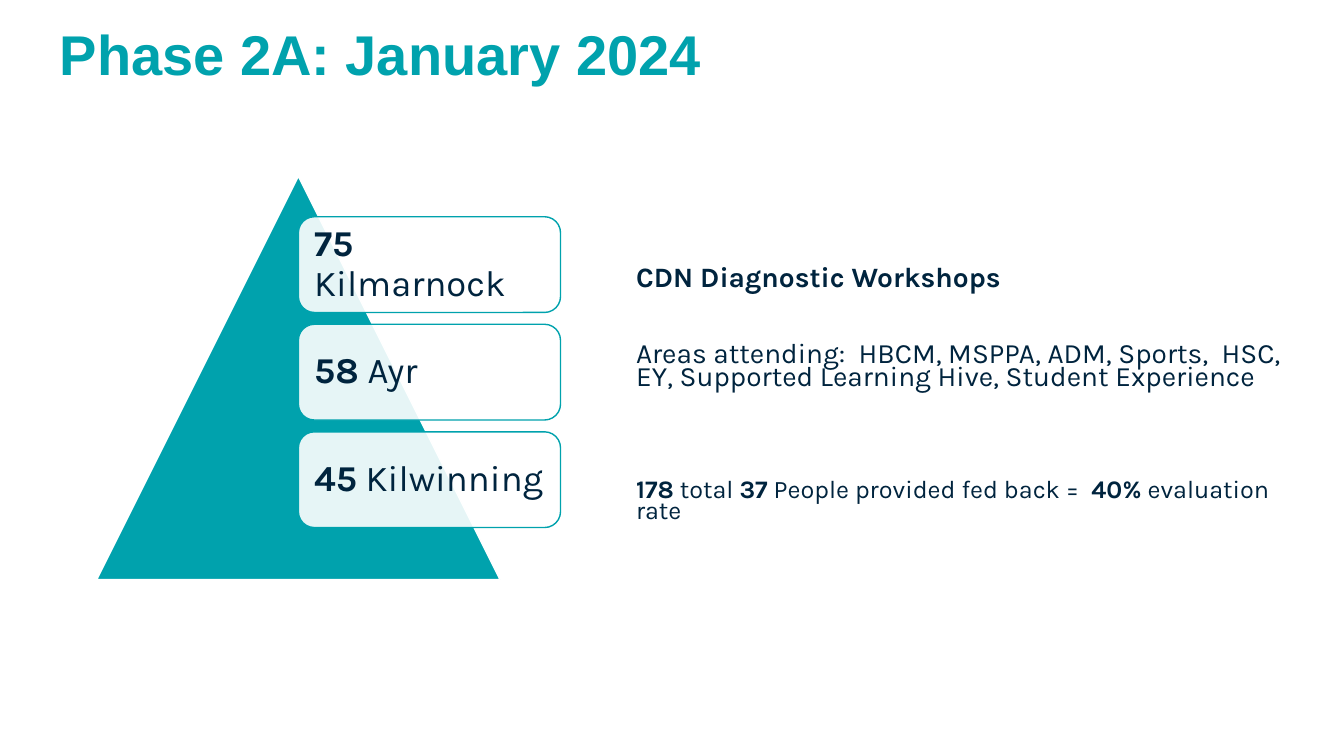
from lxml.etree import SubElement
from pptx import Presentation
from pptx.dml.color import RGBColor
from pptx.enum.shapes import MSO_SHAPE as Shape
from pptx.enum.text import MSO_ANCHOR as Anchor, PP_ALIGN as Align
from pptx.oxml.ns import qn
from pptx.util import Inches, Pt

CELL = 0.1
TEAL, NAVY, WHITE = "00A2AD", "00243E", "FFFFFF"


def rgb(value):
    return RGBColor.from_string(value)


class Deck:
    """Holds the style and current slide; lengths are columns and rows of a grid."""

    heading_font, body_font = "Arial", "Karla"

    def __init__(self, width, height):
        self.prs = Presentation()
        self.prs.slide_width, self.prs.slide_height = Inches(width), Inches(height)
        self.slide = self.prs.slides.add_slide(self.prs.slide_layouts[6])

    def place(self, *cells):
        return [Inches(n * CELL) for n in cells]

    def frame(self, sp, anchor, left, top, right, bottom):
        tf = sp.text_frame
        tf.word_wrap = True
        tf.vertical_anchor = anchor
        tf.margin_left, tf.margin_top, tf.margin_right, tf.margin_bottom = self.place(
            left, top, right, bottom)
        return tf

    def add_runs(self, p, runs, size, spacing, font=body_font, color=NAVY, before=0):
        p.alignment = Align.LEFT
        p.line_spacing = spacing
        p.space_before = Pt(before)
        for text, bold in runs:
            r = p.add_run()
            r.text = text
            r.font.name, r.font.size, r.font.bold = font, Pt(size), bold
            r.font.color.rgb = rgb(color)

    def shape(self, kind, box, fill, line, opacity=100):
        sp = self.slide.shapes.add_shape(kind, *self.place(*box))
        sp.shadow.inherit = False
        sp.fill.solid()
        sp.fill.fore_color.rgb = rgb(fill)
        sp.line.color.rgb = rgb(line)
        sp.line.width = Pt(1)
        if opacity < 100:
            color = sp.element.spPr.find(qn("a:solidFill"))[0]
            SubElement(color, qn("a:alpha")).set("val", str(opacity * 1000))
        return sp

    def title(self, text, box):
        sp = self.slide.shapes.add_textbox(*self.place(*box))
        tf = self.frame(sp, Anchor.MIDDLE, 1, 0.5, 1, 0.5)
        self.add_runs(tf.paragraphs[0], [(text, True)], 40, 0.9, self.heading_font, TEAL)

    def card(self, runs, box):
        sp = self.shape(Shape.ROUNDED_RECTANGLE, box, WHITE, TEAL, 90)
        tf = self.frame(sp, Anchor.MIDDLE, 1.1, 1.1, 1.1, 1.1)
        self.add_runs(tf.paragraphs[0], runs, 26, 0.9)

    def body(self, paragraphs, box, top):
        sp = self.slide.shapes.add_textbox(*self.place(*box))
        tf = self.frame(sp, Anchor.TOP, 1, top, 1, 0.5)
        for i, (size, before, runs) in enumerate(paragraphs):
            p = tf.add_paragraph() if i else tf.paragraphs[0]
            self.add_runs(p, runs, size, 0.7, before=before)


def main():
    deck = Deck(13.33, 7.5)
    deck.title("Phase 2A: January 2024", (4.95, 0, 106.7, 11.3))

    deck.shape(Shape.ISOSCELES_TRIANGLE, (9.6, 17.5, 40, 40), TEAL, WHITE)
    campuses = [("75", "Kilmarnock"), ("58", "Ayr"), ("45", "Kilwinning")]
    for i, (count, campus) in enumerate(campuses):
        deck.card([(count, True), (" " + campus, False)],
                  (29.6, 21.5 + i * 10.67, 26, 9.5))

    deck.body([
        (20, 0, [("CDN Diagnostic Workshops", True)]),
        (20, 37, [("Areas attending:  HBCM, MSPPA, ADM, Sports,  HSC, EY, "
                   "Supported Learning Hive, Student Experience", False)]),
        (18, 64, [("178", True), (" total ", False), ("37", True),
                  (" People provided fed back =  ", False), ("40%", True),
                  (" evaluation rate", False)]),
    ], (62.1, 16.8, 68.2, 41.5), 9.9)

    deck.prs.save("out.pptx")


if __name__ == "__main__":
    main()
